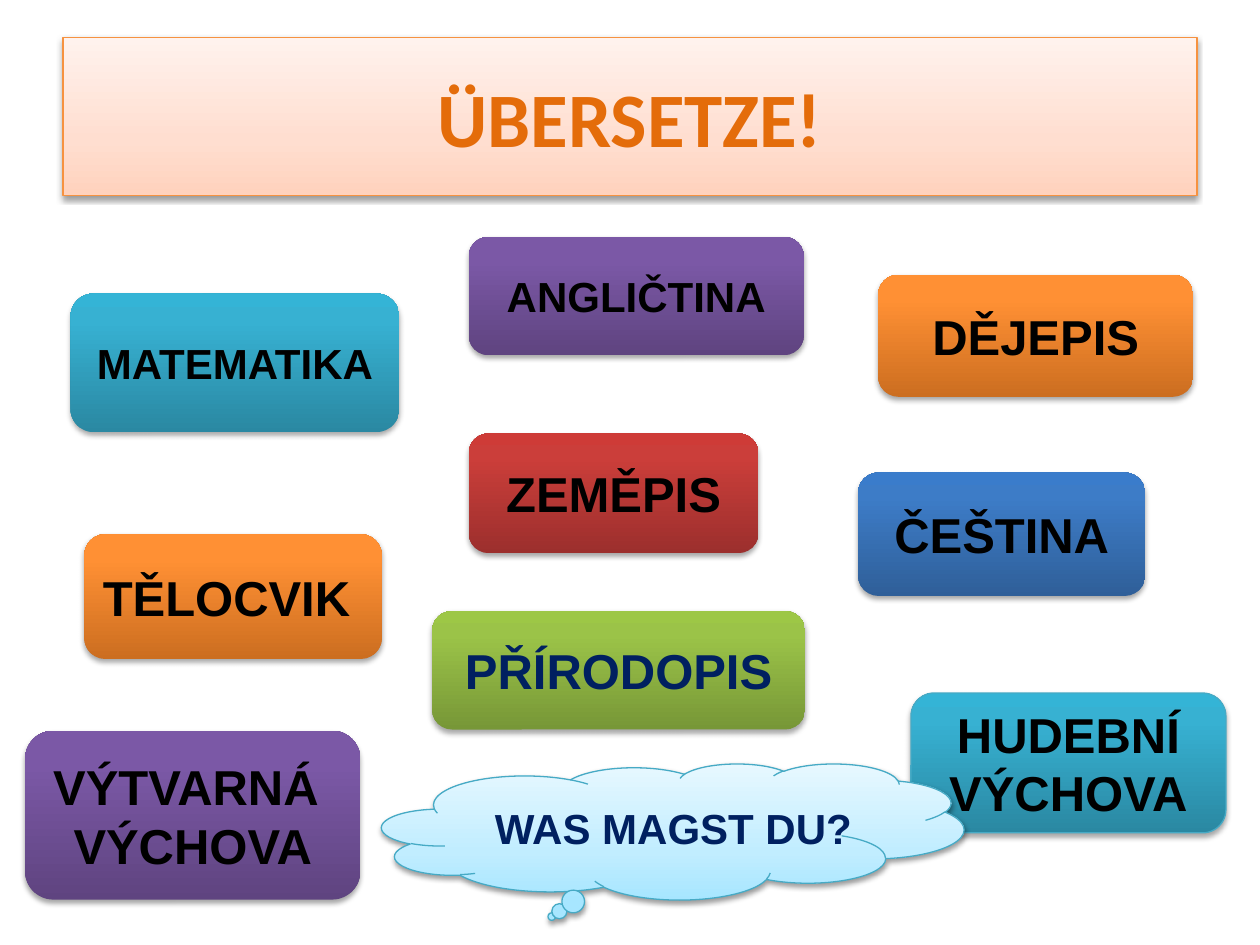
import pptx
import pptx.util
import pptx.dml.color
import pptx.enum.shapes
import pptx.enum.text
import pptx.oxml.ns
import lxml.etree

Inches = pptx.util.Inches
Shape = pptx.enum.shapes.MSO_SHAPE
Align = pptx.enum.text.PP_ALIGN

COLORS = {"black": "000000", "navy": "002060", "title": "E46C0A",
          "title line": "F69240", "aqua line": "46AAC5"}
# Gradient colours from bottom to top
GRADIENTS = {
    "purple": ("5F4480", "7B58A6", "7C57A8"),
    "blue": ("2F5F99", "3D7CC7", "3A7CCB"),
    "red": ("9C2F2D", "CB3E3A", "CE3B37"),
    "orange": ("CC6E20", "FF9034", "FF9136"),
    "aqua": ("2A88A2", "37B1D2", "34B4D6"),
    "green": ("779737", "9BC348", "9DC746"),
    "pale orange": ("FFD2BD", "FFDED0", "FFF2ED"),
    "pale aqua": ("A7E6FF", "C1EDFF", "E7F8FF"),
}


def write_text(shape, text, size=28, color="black", font="Arial",
               align=Align.CENTER, wrap=False,
               anchor=pptx.enum.text.MSO_ANCHOR.MIDDLE):
    frame = shape.text_frame
    frame.word_wrap = wrap
    frame.vertical_anchor = anchor
    frame.text = text
    for paragraph in frame.paragraphs:
        paragraph.alignment = align
        paragraph.font.size = pptx.util.Pt(size)
        paragraph.font.bold = True
        paragraph.font.name = font
        paragraph.font.color.rgb = pptx.dml.color.RGBColor.from_string(COLORS[color])


def add_panel(kind, box, gradient, middle=80, line=None, shadow_alpha=35):
    shape = slide.shapes.add_shape(kind, *map(Inches, box))
    qn = pptx.oxml.ns.qn

    def add_color(parent, value):
        return lxml.etree.SubElement(parent, qn("a:srgbClr"), val=value)

    # Three-stop gradient running upwards
    shape.fill.gradient()
    shape.fill.gradient_angle = 90
    stops = shape.element.spPr.find(".//" + qn("a:gsLst"))
    for stop in list(stops):
        stops.remove(stop)
    for position, value in zip((0, middle, 100), GRADIENTS[gradient]):
        add_color(lxml.etree.SubElement(stops, qn("a:gs"), pos=str(position * 1000)), value)

    if line:
        shape.line.color.rgb = pptx.dml.color.RGBColor.from_string(COLORS[line])
        shape.line.width = pptx.util.Pt(0.75)
    else:
        shape.line.fill.background()

    # Soft shadow below the shape
    shape.shadow.inherit = False
    effects = shape.element.spPr.find(qn("a:effectLst"))
    shadow = lxml.etree.SubElement(
        effects, qn("a:outerShdw"), blurRad=str(pptx.util.Pt(3.1)),
        dist=str(pptx.util.Pt(1.6 if shadow_alpha == 38 else 1.8)),
        dir="5400000", rotWithShape="0")
    lxml.etree.SubElement(add_color(shadow, COLORS["black"]), qn("a:alpha"),
                          val=str(shadow_alpha * 1000))
    return shape


presentation = pptx.Presentation()
presentation.slide_width = Inches(10)
presentation.slide_height = Inches(7.5)
slide = presentation.slides.add_slide(presentation.slide_layouts[6])

# Title
title = add_panel(Shape.RECTANGLE, (0.5, 0.3, 9, 1.25), "pale orange",
                  middle=35, line="title line", shadow_alpha=38)
write_text(title, "ÜBERSETZE!", size=44, color="title", font="Calibri", wrap=True)

# School subjects: text, box, gradient, text format, outline
subjects = [
    ("VÝTVARNÁ \nVÝCHOVA", (0.2, 5.8, 2.66, 1.34), "purple", {}, None),
    ("ČEŠTINA", (6.81, 3.75, 2.28, 0.98), "blue", {}, None),
    ("ANGLIČTINA", (3.72, 1.88, 2.66, 0.94), "purple", {"size": 24}, None),
    ("ZEMĚPIS", (3.72, 3.44, 2.3, 0.95), "red", {}, None),
    ("DĚJEPIS", (6.97, 2.18, 2.5, 0.97), "orange", {}, None),
    ("HUDEBNÍ\nVÝCHOVA", (7.23, 5.5, 2.5, 1.11), "aqua", {}, "aqua line"),
    ("PŘÍRODOPIS", (3.43, 4.85, 2.96, 0.94), "green", {"color": "navy"}, None),
    ("MATEMATIKA", (0.56, 2.33, 2.61, 1.1), "aqua", {"size": 24}, None),
    ("TĚLOCVIK", (0.67, 4.24, 2.36, 0.99), "orange", {"align": Align.LEFT}, None),
]
for text, box, gradient, text_format, line in subjects:
    card = add_panel(Shape.ROUNDED_RECTANGLE, box, gradient, line=line)
    write_text(card, text, **text_format)

# Thought cloud with its question
cloud = add_panel(Shape.CLOUD_CALLOUT, (3.03, 6.06, 4.62, 1.08), "pale aqua",
                  middle=35, line="aqua line", shadow_alpha=38)
cloud.adjustments[0] = -0.208
cloud.adjustments[1] = 0.625
question = slide.shapes.add_textbox(*map(Inches, (3.83, 6.32, 3.44, 0.51)))
write_text(question, "WAS MAGST DU?", size=24, color="navy", align=Align.LEFT,
           wrap=True, anchor=pptx.enum.text.MSO_ANCHOR.TOP)

presentation.save("out.pptx")
